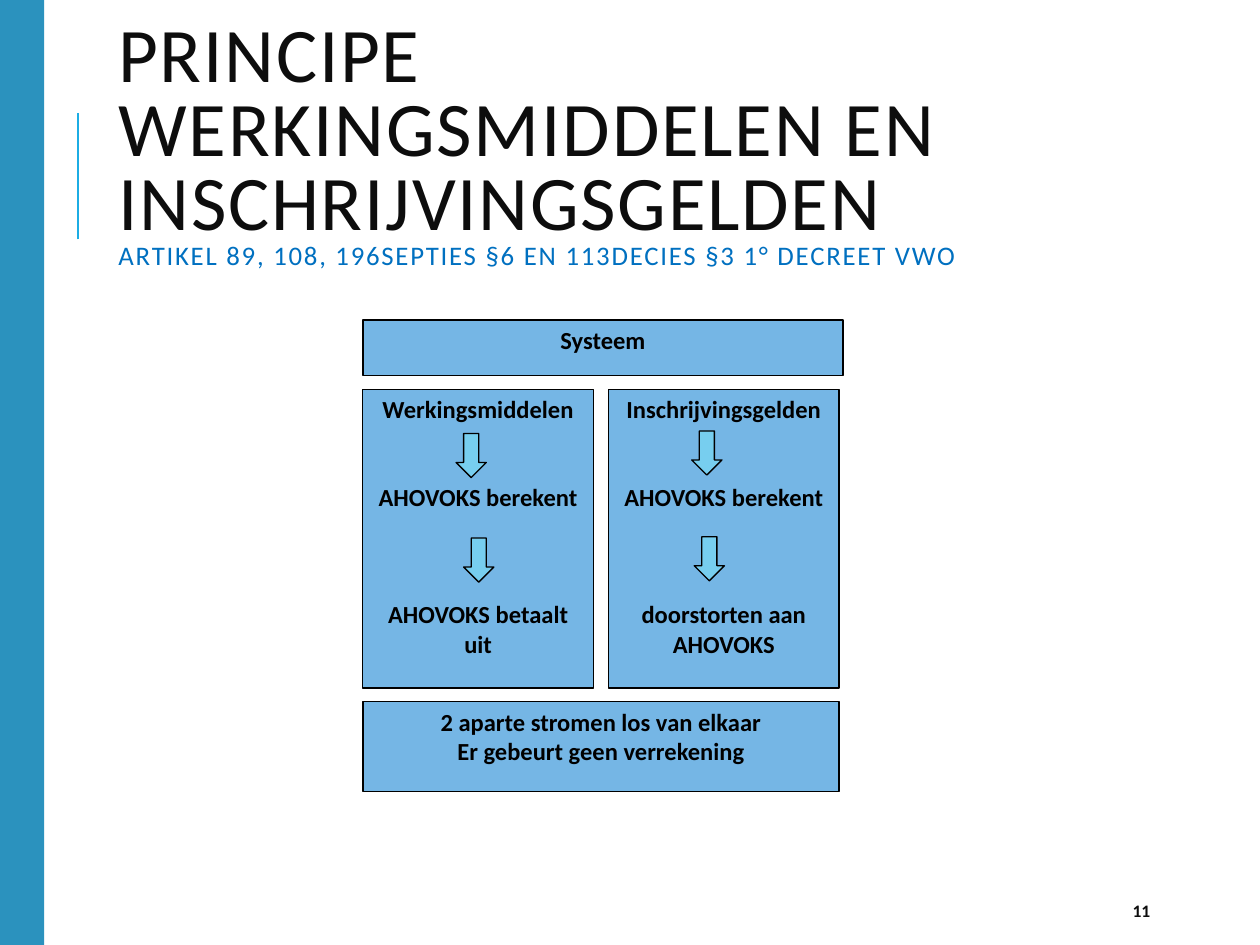
from pptx import Presentation, util as u
from pptx.dml.color import RGBColor
from pptx.enum import shapes, text
from pptx.oxml.ns import qn

FONT, INK, BLACK, BOX_BLUE, ARROW_BLUE = "Calibri", "0D0D0D", "000000", "75B6E5", "77CEEF"


def colour(value):
    return RGBColor.from_string(value)


def add_box(kind, left, top, width, height, fill, outline=BLACK, paragraphs=(), gaps=()):
    """Add a filled shape with centred bold paragraphs; gaps are points above each one."""
    shape = slide.shapes.add_shape(kind, *map(u.Inches, (left, top, width, height)))
    shape.shadow.inherit = False
    shape.fill.solid()
    shape.fill.fore_color.rgb = colour(fill)
    if outline:
        shape.line.color.rgb = colour(outline)
        shape.line.width = u.Pt(0.75)
    else:
        shape.line.fill.background()
    if paragraphs:
        frame = shape.text_frame
        frame.margin_left = frame.margin_right = u.Inches(0.07)
        frame.margin_top = frame.margin_bottom = u.Inches(0.04)
        frame.vertical_anchor = text.MSO_ANCHOR.TOP
        frame.text = "\n".join(paragraphs)
        for index, paragraph in enumerate(frame.paragraphs):
            paragraph.alignment = text.PP_ALIGN.CENTER
            paragraph.space_before = u.Pt(gaps[index] if gaps else 0)
            font = paragraph.runs[0].font
            font.name, font.size, font.bold = FONT, u.Pt(14), True
            font.color.rgb = colour(BLACK)


presentation = Presentation()
presentation.slide_width, presentation.slide_height = u.Inches(10), u.Inches(7.5)
slide = presentation.slides.add_slide(presentation.slide_layouts[5])
RECTANGLE, DOWN_ARROW = shapes.MSO_SHAPE.RECTANGLE, shapes.MSO_SHAPE.DOWN_ARROW

# Side band and accent line
add_box(RECTANGLE, 0, 0, 0.35, 7.5, "2B92BE", outline=None)
accent = slide.shapes.add_connector(
    shapes.MSO_CONNECTOR.STRAIGHT, *map(u.Inches, (0.62, 1.9, 0.62, 0.9)))
accent.line.color.rgb = colour("1CADE4")
accent.line.width = u.Pt(1.5)
properties = accent._element.spPr
properties.append(properties.makeelement(qn("a:effectLst"), {}))

# Title with the legal reference on its last line
title = slide.shapes.title
title.left, title.top, title.width, title.height = map(u.Inches, (0.84, 0.64, 7.97, 1.64))
frame = title.text_frame
frame.word_wrap = True
frame.auto_size = text.MSO_AUTO_SIZE.NONE
frame.vertical_anchor = text.MSO_ANCHOR.MIDDLE
frame.margin_bottom = u.Inches(0.64)
paragraph = frame.paragraphs[0]
paragraph.text = ("PRINCIPE WERKINGSMIDDELEN EN INSCHRIJVINGSGELDEN\v"
                  "ARTIKEL 89, 108, 196SEPTIES §6 EN 113DECIES §3 1° DECREET VWO")
paragraph.alignment = text.PP_ALIGN.LEFT
paragraph.line_spacing = 0.8
for run, size, ink in zip(paragraph.runs, (44.1, 15.3), (INK, "0070C0")):
    run.font.name, run.font.size = FONT, u.Pt(size)
    run.font.color.rgb = colour(ink)
    run._r.get_or_add_rPr().set("spc", "100")

# Grid of the scheme: two columns between a heading and a conclusion
left, column_width, gutter = 2.88, 1.83, 0.12
columns = [left, left + column_width + gutter]
add_box(RECTANGLE, left, 2.54, 3.81, 0.44, BOX_BLUE, paragraphs=["Systeem"])
add_box(RECTANGLE, left, 5.57, 2 * column_width + gutter, 0.71, BOX_BLUE,
        paragraphs=["2 aparte stromen los van elkaar", "Er gebeurt geen verrekening"])

# Each flow: name, last step and the places of its two arrows
flows = [
    ("Werkingsmiddelen", "AHOVOKS betaalt uit", [(3.62, 3.44), (3.68, 4.27)]),
    ("Inschrijvingsgelden", "doorstorten aan AHOVOKS", [(5.49, 3.42), (5.51, 4.26)]),
]
for column, (name, last_step, arrows) in zip(columns, flows):
    add_box(RECTANGLE, column, 3.09, column_width, 2.37, BOX_BLUE,
            paragraphs=[name, "AHOVOKS berekent", last_step], gaps=[0, 33.5, 50])
    for arrow_left, arrow_top in arrows:
        add_box(DOWN_ARROW, arrow_left, arrow_top, 0.24, 0.35, ARROW_BLUE)

# Slide number
number = slide.shapes.add_textbox(*map(u.Inches, (8.89, 7.08, 0.8, 0.3)))
number.text_frame.word_wrap = True
number.text_frame.vertical_anchor = text.MSO_ANCHOR.MIDDLE
number.text_frame.text = "11"
font = number.text_frame.paragraphs[0].runs[0].font
font.name, font.size, font.bold = FONT, u.Pt(10), True
font.color.rgb = colour(INK)

presentation.save("out.pptx")
